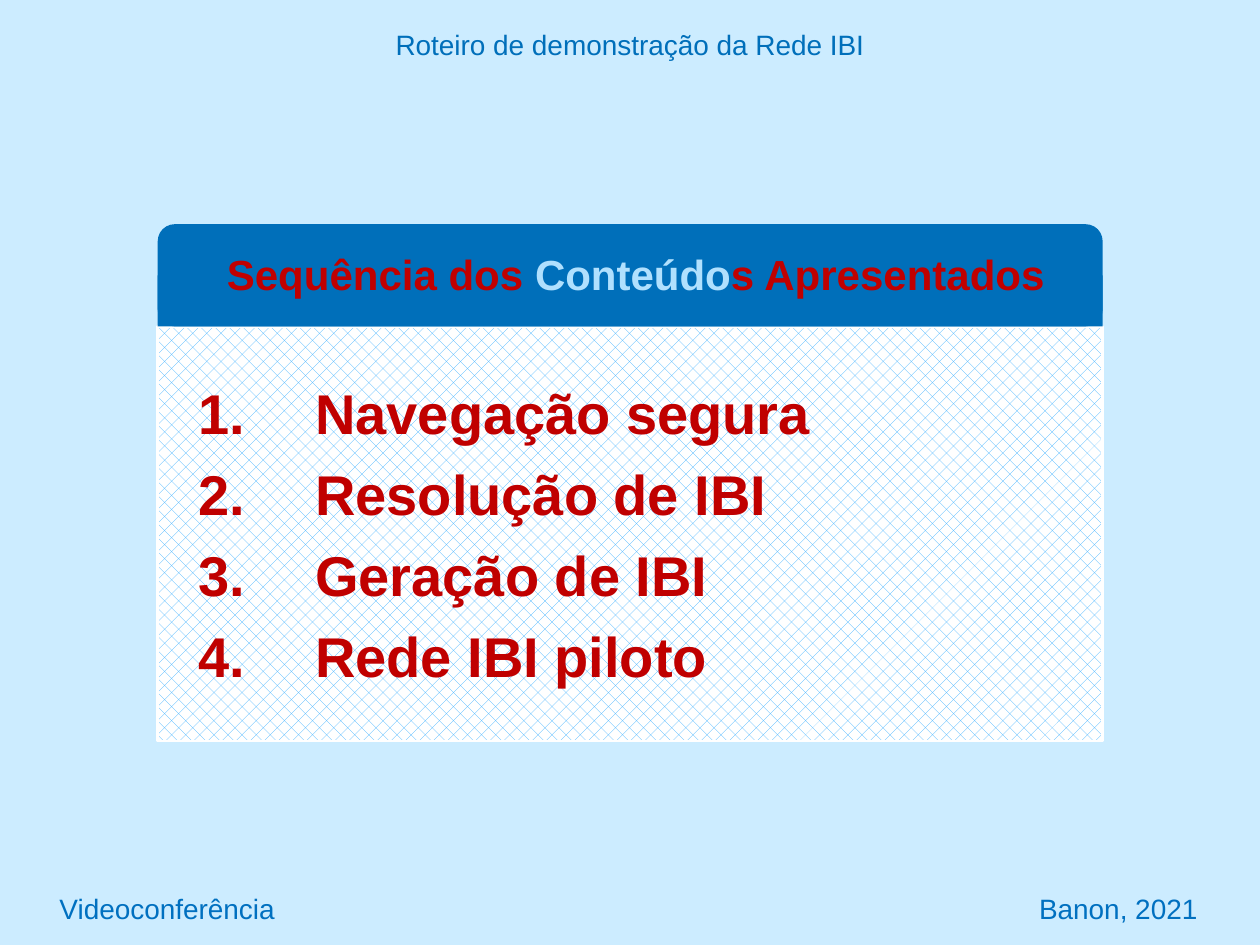
from lxml import etree
from pptx import Presentation
from pptx.dml.color import RGBColor
from pptx.enum.dml import MSO_PATTERN
from pptx.enum.shapes import MSO_SHAPE
from pptx.enum.text import MSO_ANCHOR, MSO_AUTO_SIZE, PP_ALIGN
from pptx.oxml.ns import qn
from pptx.util import Cm, Pt

RECT, ROUNDED = MSO_SHAPE.RECTANGLE, MSO_SHAPE.ROUNDED_RECTANGLE
DOTTED = MSO_PATTERN.PERCENT_25
TOP, MIDDLE = MSO_ANCHOR.TOP, MSO_ANCHOR.MIDDLE
LEFT, CENTER = PP_ALIGN.LEFT, PP_ALIGN.CENTER
NO_AUTOFIT = MSO_AUTO_SIZE.NONE

FONT = "Arial"
COLORS = {
    "background": "CCECFF",
    "bar": "006FBA",
    "footer": "0070C0",
    "accent": "C00000",
    "highlight": "B0E0FE",
    "mesh": "3BB1FF",
    "white": "FFFFFF",
}
SLIDE_W, SLIDE_H = 25.4, 19.05
TOPICS = ["Navegação segura", "Resolução de IBI", "Geração de IBI", "Rede IBI piloto"]
TITLE_RUNS = [
    ("Sequência dos ", "accent"),
    ("Conteúdo", "highlight"),
    ("s Apresentados", "accent"),
]


def color(name):
    return RGBColor.from_string(COLORS[name])


def place(shape, left, top, width, height):
    shape.left, shape.top = Cm(left), Cm(top)
    shape.width, shape.height = Cm(width), Cm(height)


def setup_frame(shape, anchor):
    frame = shape.text_frame
    frame.word_wrap = True
    frame.auto_size = NO_AUTOFIT
    frame.vertical_anchor = anchor
    return frame


def add_run(paragraph, text, size, color_name, bold=False):
    run = paragraph.add_run()
    run.text = text
    run.font.name = FONT
    run.font.size = Pt(size)
    run.font.bold = bold
    run.font.color.rgb = color(color_name)


def add_bar_part(slide, preset, left, top, width, height):
    part = slide.shapes.add_shape(preset, Cm(left), Cm(top), Cm(width), Cm(height))
    part.shadow.inherit = False
    part.fill.solid()
    part.fill.fore_color.rgb = color("bar")
    part.line.fill.background()
    return part


def build_title_bar(slide, left, top, width, height):
    add_bar_part(slide, RECT, left, top + height / 2, width, height / 2)
    add_bar_part(slide, ROUNDED, left, top, width, height)
    title = slide.shapes.title
    place(title, left + 1.14, top + 0.36, width - 1.8, 1.27)
    paragraph = setup_frame(title, MIDDLE).paragraphs[0]
    paragraph.alignment = LEFT
    for text, color_name in TITLE_RUNS:
        add_run(paragraph, text, 24, color_name, bold=True)
    title.element.getparent().append(title.element)


def build_topic_list(slide, left, top, width, height):
    topics = slide.placeholders[1]
    place(topics, left, top, width, height)
    topics.fill.patterned()
    topics.fill.pattern = DOTTED
    topics.fill.fore_color.rgb = color("mesh")
    topics.fill.back_color.rgb = color("white")
    topics.line.color.rgb = color("white")
    topics.line.width = Pt(1.5)
    frame = setup_frame(topics, MIDDLE)
    for index, topic in enumerate(TOPICS):
        paragraph = frame.paragraphs[0] if index == 0 else frame.add_paragraph()
        paragraph.alignment = LEFT
        paragraph.space_before = Pt(8)
        add_run(paragraph, topic, 32, "accent", bold=True)
        properties = paragraph._p.get_or_add_pPr()
        properties.set("marL", str(Cm(2.92)))
        properties.set("indent", str(Cm(-2.36)))
        etree.SubElement(properties, qn("a:buFont"), typeface="+mj-lt")
        etree.SubElement(properties, qn("a:buAutoNum"), type="arabicPeriod")


def build_card(slide, left, top, width, height):
    bar_height = 2.06
    build_topic_list(slide, left, top + bar_height, width, height - bar_height)
    build_title_bar(slide, left, top, width, bar_height)


def build_header(slide, left, top, width, height):
    header = slide.shapes.add_textbox(Cm(left), Cm(top), Cm(width), Cm(height))
    paragraph = setup_frame(header, TOP).paragraphs[0]
    paragraph.alignment = CENTER
    add_run(paragraph, "Roteiro de demonstração da Rede IBI", 16, "bar")


def build_footer(slide, left, top, width, height):
    margin = 1.2
    footer = slide.shapes.add_textbox(Cm(left), Cm(top), Cm(width), Cm(height))
    frame = setup_frame(footer, MIDDLE)
    frame.margin_left, frame.margin_right = Cm(margin), Cm(margin)
    paragraph = frame.paragraphs[0]
    add_run(paragraph, "Videoconferência\tBanon, 2021", 16, "footer")
    tabs = etree.SubElement(paragraph._p.get_or_add_pPr(), qn("a:tabLst"))
    right_edge = str(Cm(width - 2 * margin - 0.06))
    etree.SubElement(tabs, qn("a:tab"), pos=right_edge, algn="r")


def main():
    deck = Presentation()
    deck.slide_width, deck.slide_height = Cm(SLIDE_W), Cm(SLIDE_H)
    slide = deck.slides.add_slide(deck.slide_layouts[1])
    slide.background.fill.solid()
    slide.background.fill.fore_color.rgb = color("background")
    build_card(slide, 3.18, 4.52, 19.05, 10.42)
    build_header(slide, 0, 0.43, SLIDE_W, 0.94)
    build_footer(slide, 0, 17.78, SLIDE_W, 1.07)
    deck.save("out.pptx")


if __name__ == "__main__":
    main()
